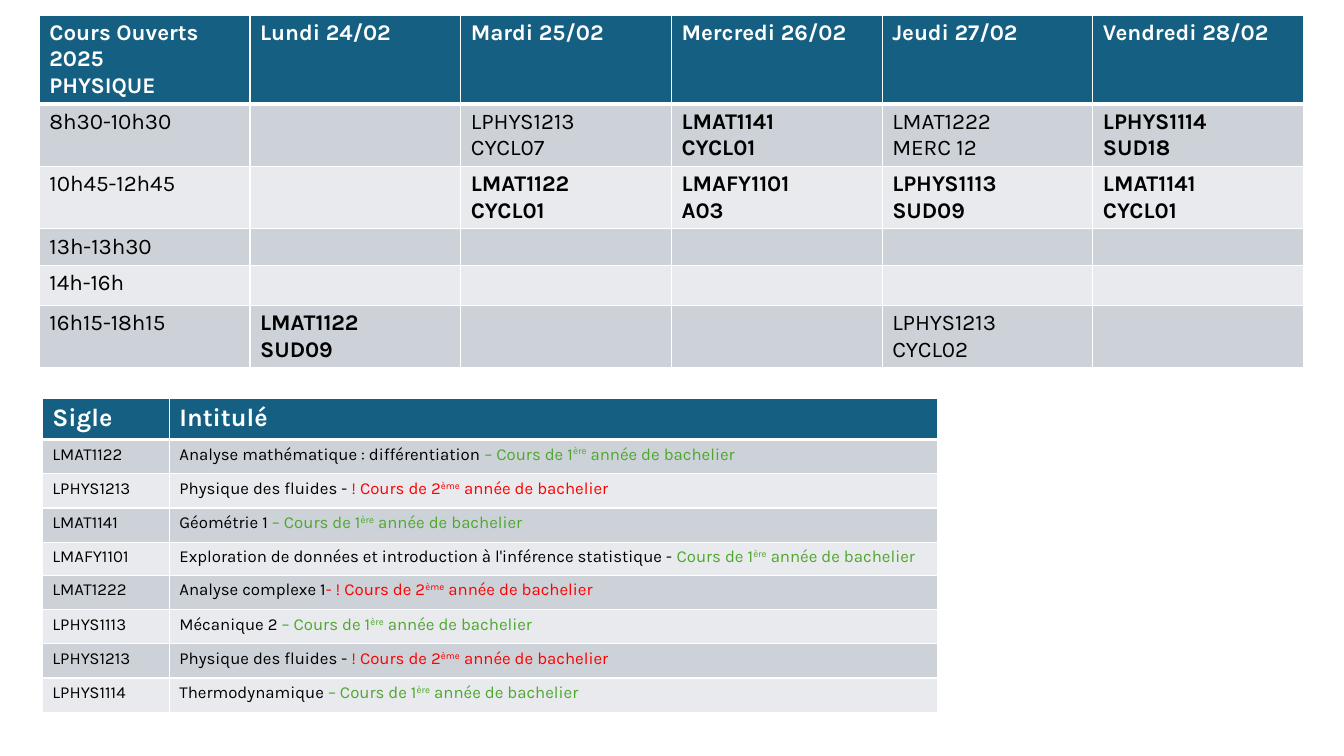
from dataclasses import dataclass
from lxml import etree
from pptx import Presentation, util as u
from pptx.dml import color
from pptx.oxml import ns


@dataclass(frozen=True)
class Theme:
    font: str = "Karla"
    head: str = "156082"
    bands: tuple[str, str] = ("CCD2D8", "E8EAED")
    white: str = "FFFFFF"
    black: str = "000000"
    green: str = "4EA72E"
    red: str = "FF0000"
    title: int = 18
    body: int = 16
    small: int = 12
    thin: int = 1
    thick: int = 3


@dataclass(frozen=True)
class Grid:
    left: float
    top: float
    height: float
    cols: list[float]
    rows: list[float]


@dataclass(frozen=True)
class Part:
    text: str
    tint: str
    bold: bool = False
    raised: bool = False


@dataclass(frozen=True)
class Course:
    code: str
    title: str
    lead: str
    year: int


THEME = Theme()
WIDE, HIGH = u.Inches(13.33), u.Inches(7.5)

WEEK = Grid(2.93, 2, 47.6, [15.68] * 6, [10.8, 8.27, 5.73, 4.67, 5.33, 8.27])
LIST = Grid(3.15, 52.67, 42.13, [9.45, 57.16], [5.47] + [4.53] * 3 + [4.4] + [4.53] * 4)

DAYS = ["Cours Ouverts 2025\nPHYSIQUE", "Lundi 24/02", "Mardi 25/02",
        "Mercredi 26/02", "Jeudi 27/02", "Vendredi 28/02"]

SLOTS = [
    ["8h30-10h30", "", "LPHYS1213\vCYCL07", "*LMAT1141\vCYCL01",
     "LMAT1222\vMERC 12", "*LPHYS1114\vSUD18"],
    ["10h45-12h45", "", "*LMAT1122\vCYCL01", "*LMAFY1101\vA03",
     "*LPHYS1113\vSUD09", "*LMAT1141\vCYCL01"],
    ["13h-13h30"] + [""] * 5,
    ["14h-16h"] + [""] * 5,
    ["16h15-18h15", "*LMAT1122\vSUD09", "", "", "LPHYS1213\vCYCL02", ""],
]

FLUIDS = Course("LPHYS1213", "Physique des fluides - ", "! ", 2)
COURSES = [
    Course("LMAT1122", "Analyse mathématique : différentiation ", "– ", 1),
    FLUIDS,
    Course("LMAT1141", "Géométrie 1 ", "– ", 1),
    Course("LMAFY1101", "Exploration de données et introduction à l'inférence statistique - ", "", 1),
    Course("LMAT1222", "Analyse complexe 1", "- ! ", 2),
    Course("LPHYS1113", "Mécanique 2 ", "– ", 1),
    FLUIDS,
    Course("LPHYS1114", "Thermodynamique ", "– ", 1),
]


def across(share: float) -> int:
    return round(WIDE * share / 100)


def down(share: float) -> int:
    return round(HIGH * share / 100)


def style(run, part: Part, size: int) -> None:
    font = run.font
    font.name, font.size, font.bold = THEME.font, u.Pt(size), part.bold
    font.color.rgb = color.RGBColor.from_string(part.tint)
    if part.raised:
        font._element.set("baseline", "30000")


def write(cell, parts: list[Part], size: int) -> None:
    frame = cell.text_frame
    if len(parts) == 1:
        frame.text = ""
        for pos, line in enumerate(parts[0].text.split("\n")):
            para = frame.add_paragraph() if pos else frame.paragraphs[0]
            para.text = line
            for run in para.runs:
                style(run, parts[0], size)
    else:
        for part in parts:
            run = frame.paragraphs[0].add_run()
            run.text = part.text
            style(run, part, size)
    points = str(size * 100)
    for para in frame.paragraphs:
        for gap in para._p.findall(ns.qn("a:br")):
            etree.SubElement(gap, ns.qn("a:rPr"), sz=points)
        if not para.runs:
            end = etree.SubElement(para._p, ns.qn("a:endParaRPr"), sz=points)
            etree.SubElement(end, ns.qn("a:latin"), typeface=THEME.font)


def paint(cell, fill: str, base: int) -> None:
    cell.fill.solid()
    cell.fill.fore_color.rgb = color.RGBColor.from_string(fill)
    props = cell._tc.get_or_add_tcPr()
    for pos, side in enumerate("LRTB"):
        width = base if side == "B" else THEME.thin
        line = etree.Element(ns.qn(f"a:ln{side}"), w=str(u.Pt(width)))
        solid = etree.SubElement(line, ns.qn("a:solidFill"))
        etree.SubElement(solid, ns.qn("a:srgbClr"), val=THEME.white)
        props.insert(pos, line)


def draw(slide, grid: Grid, cells: list[list[list[Part]]], top: int, size: int) -> None:
    table = slide.shapes.add_table(
        len(grid.rows), len(grid.cols), across(grid.left), down(grid.top),
        across(sum(grid.cols)), down(grid.height)).table
    for col, share in zip(table.columns, grid.cols):
        col.width = across(share)
    for row, share in zip(table.rows, grid.rows):
        row.height = down(share)
    for r, line in enumerate(cells):
        for c, parts in enumerate(line):
            cell = table.cell(r, c)
            write(cell, parts, size if r else top)
            fill = THEME.bands[(r - 1) % 2] if r else THEME.head
            paint(cell, fill, THEME.thin if r else THEME.thick)


def header(names: list[str]) -> list[list[Part]]:
    return [[Part(name, THEME.white, True)] for name in names]


def slot(text: str) -> list[Part]:
    return [Part(text.lstrip("*"), THEME.black, text.startswith("*"))]


def entry(course: Course) -> list[list[Part]]:
    tint, mark = (THEME.green, "ère") if course.year == 1 else (THEME.red, "ème")
    return [
        [Part(course.code, THEME.black)],
        [Part(course.title, THEME.black),
         Part(f"{course.lead}Cours de {course.year}", tint),
         Part(mark, tint, raised=True),
         Part(" année de bachelier", tint)],
    ]


def main() -> None:
    deck = Presentation()
    deck.slide_width, deck.slide_height = WIDE, HIGH
    slide = deck.slides.add_slide(deck.slide_layouts[6])
    week = [header(DAYS)] + [[slot(text) for text in row] for row in SLOTS]
    draw(slide, WEEK, week, THEME.body, THEME.body)
    names = [header(["Sigle", "Intitulé"])] + [entry(course) for course in COURSES]
    draw(slide, LIST, names, THEME.title, THEME.small)
    deck.save("out.pptx")


if __name__ == "__main__":
    main()
